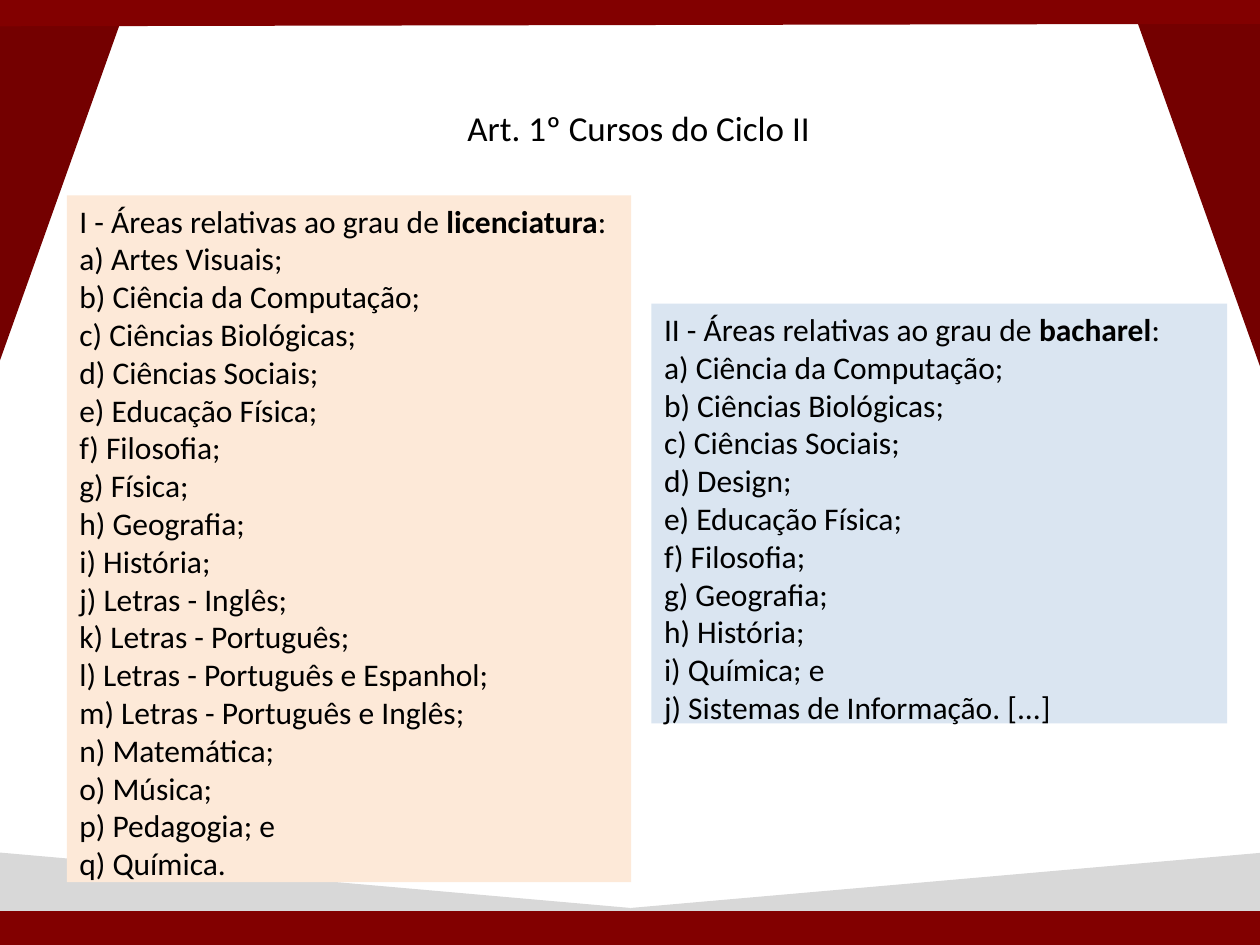
import pptx
import pptx.dml.color
import pptx.enum.shapes
import pptx.enum.text
import pptx.oxml.ns
import pptx.util
from lxml import etree

Inches, Pt = pptx.util.Inches, pptx.util.Pt
RGBColor = pptx.dml.color.RGBColor
PP_ALIGN = pptx.enum.text.PP_ALIGN
MSO_AUTO_SIZE = pptx.enum.text.MSO_AUTO_SIZE
qn = pptx.oxml.ns.qn

BLACK = RGBColor(0x00, 0x00, 0x00)
DARK_RED = RGBColor(0x74, 0x00, 0x00)
RED = RGBColor(0x82, 0x00, 0x00)
GREY = RGBColor(0xD8, 0xD8, 0xD8)
PEACH = RGBColor(0xFD, 0xE9, 0xD8)
PALE_BLUE = RGBColor(0xDA, 0xE5, 0xF1)


def add_run(paragraph, text, size, bold=False):
    run = paragraph.add_run()
    run.text = text
    run.font.name = "Calibri"
    run.font.size = Pt(size)
    run.font.bold = bold
    run.font.color.rgb = BLACK


def place(placeholder, left, top, width, height):
    placeholder.left, placeholder.top = Inches(left), Inches(top)
    placeholder.width, placeholder.height = Inches(width), Inches(height)
    # Bring the text in front of the decoration
    placeholder.element.getparent().append(placeholder.element)


presentation = pptx.Presentation()
presentation.slide_width = Inches(10)
presentation.slide_height = Inches(7.5)
slide = presentation.slides.add_slide(presentation.slide_layouts[3])
title = slide.shapes.title
left_list, right_list = slide.placeholders[1], slide.placeholders[2]
for placeholder in list(slide.placeholders):
    if placeholder.placeholder_format.idx > 2:
        placeholder.element.getparent().remove(placeholder.element)

# Corner curtains and floor wedges: left, top, width, height, rotation, apex, colour
wedges = [
    (0, -0.03, 1.03, 2.89, 180, 1, DARK_RED),
    (9.01, 0.13, 1.03, 2.89, 180, 0, DARK_RED),
    (-0.01, 6.78, 5.01, 0.44, 0, 0, GREY),
    (5.01, 6.78, 5.03, 0.44, 0, 1, GREY),
]
for left, top, width, height, rotation, apex, color in wedges:
    wedge = slide.shapes.add_shape(
        pptx.enum.shapes.MSO_SHAPE.ISOSCELES_TRIANGLE,
        Inches(left), Inches(top), Inches(width), Inches(height))
    wedge.adjustments[0] = apex
    wedge.rotation = rotation
    wedge.shadow.inherit = False
    wedge.fill.solid()
    wedge.fill.fore_color.rgb = color
    if color == GREY:
        wedge.line.color.rgb = color
        wedge.line.width = Pt(2)
    else:
        wedge.line.fill.background()

# Top and bottom bands
for start_y, end_y in [(0.07, 0.05), (7.37, 7.37)]:
    band = slide.shapes.add_connector(
        pptx.enum.shapes.MSO_CONNECTOR.STRAIGHT,
        Inches(0), Inches(start_y), Inches(10), Inches(end_y))
    band.line.color.rgb = RED
    band.line.width = Pt(20)
    etree.SubElement(band.element.spPr, qn("a:effectLst"))

# Course lists
licenciatura_courses = [
    "Artes Visuais;", "Ciência da Computação;", "Ciências Biológicas;",
    "Ciências Sociais;", "Educação Física;", "Filosofia;", "Física;",
    "Geografia;", "História;", "Letras - Inglês;", "Letras - Português;",
    "Letras - Português e Espanhol;", "Letras - Português e Inglês;",
    "Matemática;", "Música;", "Pedagogia; e", "Química.",
]
bacharel_courses = [
    "Ciência da Computação;", "Ciências Biológicas;", "Ciências Sociais;",
    "Design;", "Educação Física;", "Filosofia;", "Geografia;", "História;",
    "Química; e", "Sistemas de Informação. [...]",
]
course_lists = [
    (left_list, (0.53, 1.55, 4.48, 5.55), PEACH, "I", "licenciatura",
     licenciatura_courses),
    (right_list, (5.17, 2.41, 4.57, 3.43), PALE_BLUE, "II", "bacharel",
     bacharel_courses),
]
for course_list, box, color, numeral, degree, courses in course_lists:
    place(course_list, *box)
    course_list.fill.solid()
    course_list.fill.fore_color.rgb = color
    frame = course_list.text_frame
    frame.word_wrap = True
    frame.auto_size = MSO_AUTO_SIZE.SHAPE_TO_FIT_TEXT
    heading = [(f"{numeral} - Áreas relativas ao grau de ", False),
               (degree, True), (":", False)]
    items = [[(f"{chr(ord('a') + i)}) {course}", False)]
             for i, course in enumerate(courses)]
    for i, runs in enumerate([heading] + items):
        paragraph = frame.paragraphs[0] if i == 0 else frame.add_paragraph()
        properties = paragraph._p.get_or_add_pPr()
        properties.set("marL", "0")
        properties.set("indent", "0")
        etree.SubElement(properties, qn("a:buNone"))
        paragraph.space_before = Pt(0)
        for text, bold in runs:
            add_run(paragraph, text, 18, bold)

# Title
place(title, 3.61, 0.79, 2.94, 0.44)
title.text_frame.word_wrap = False
title.text_frame.auto_size = MSO_AUTO_SIZE.SHAPE_TO_FIT_TEXT
title_line = title.text_frame.paragraphs[0]
title_line.alignment = PP_ALIGN.LEFT
add_run(title_line, "Art. 1º Cursos do Ciclo II", 20)

presentation.save("out.pptx")
